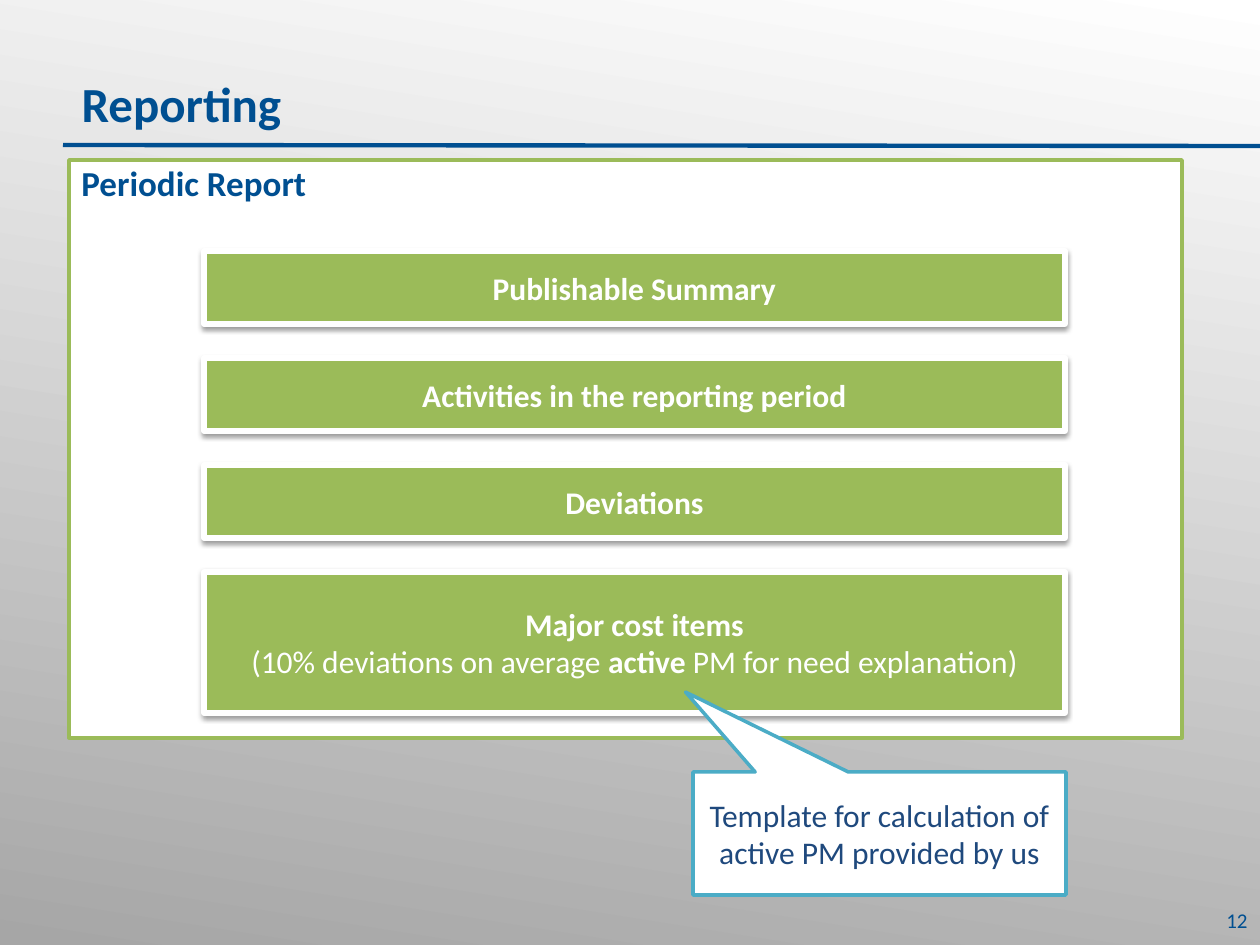
from lxml import etree
from pptx import Presentation
from pptx.dml.color import RGBColor
from pptx.enum.shapes import MSO_CONNECTOR, MSO_SHAPE
from pptx.enum.text import MSO_ANCHOR, MSO_AUTO_SIZE, PP_ALIGN
from pptx.oxml import parse_xml
from pptx.oxml.ns import nsdecls, qn
from pptx.util import Emu, Pt

RECT, CALL = MSO_SHAPE.RECTANGLE, MSO_SHAPE.RECTANGULAR_CALLOUT
LINE = MSO_CONNECTOR.STRAIGHT
TOP, MID = MSO_ANCHOR.TOP, MSO_ANCHOR.MIDDLE
LEFT, MIDST, RIGHT = PP_ALIGN.LEFT, PP_ALIGN.CENTER, PP_ALIGN.RIGHT
GROW = MSO_AUTO_SIZE.SHAPE_TO_FIT_TEXT

TITLE = "Reporting"
HEAD = "Periodic Report"
NOTE = "Template for calculation of active PM provided by us"
NUMBER = "12"
BARS = [
    (73, [[("Publishable Summary", True)]]),
    (73, [[("Activities in the reporting period", True)]]),
    (73, [[("Deviations", True)]]),
    (141, [
        [("Major cost items", True)],
        [("(10% deviations on average ", False), ("active", True),
         (" PM for need explanation)", False)],
    ]),
]
THEME = {
    "font": "Calibri",
    "blue": "004F91", "navy": "1F497D", "green": "9BBB59",
    "aqua": "4BACC6", "white": "FFFFFF", "grey": "A6A6A6",
    "title": 28, "head": 20, "body": 18, "small": 12,
}
WIDE, HIGH = 1260, 945
BAR_X, BAR_Y, BAR_W, GAP = 204, 251, 861, 34


def px(n):
    return Emu(round(n * 914400 / 126))


def tint(name):
    return RGBColor.from_string(THEME[name])


def place(item, box):
    item.left, item.top, item.width, item.height = map(px, box)


def write(item, lines, size, ink, align=LEFT, anchor=TOP):
    frame = item.text_frame
    frame.word_wrap = True
    frame.vertical_anchor = anchor
    para = frame.paragraphs[0]
    para.alignment = align
    for i, line in enumerate(lines):
        if i:
            para.add_line_break()
        for text, bold in line:
            run = para.add_run()
            run.text = text
            font = run.font
            font.name, font.size, font.bold = THEME["font"], Pt(THEME[size]), bold
            font.color.rgb = tint(ink)
    return para


def head(item, text, size):
    para = write(item, [[(text, True)]], size, "blue")
    para.line_spacing = 0.9
    para.space_before, para.space_after = Pt(0), Pt(12)
    item.text_frame.auto_size = GROW


def block(slide, kind, box, fill, edge, width):
    item = slide.shapes.add_shape(kind, *map(px, box))
    item.shadow.inherit = False
    item.fill.solid()
    item.fill.fore_color.rgb = tint(fill)
    item.line.color.rgb = tint(edge)
    item.line.width = Pt(width)
    return item


def shade(item):
    glow = item._element.spPr.find(qn("a:effectLst"))
    glow.append(parse_xml(
        f'<a:outerShdw {nsdecls("a")} blurRad="{Pt(3.1)}" dist="{Pt(1.6)}" '
        'dir="5400000" rotWithShape="0"><a:srgbClr val="000000">'
        '<a:alpha val="38000"/></a:srgbClr></a:outerShdw>'))


def backdrop(slide):
    item = slide.shapes.add_shape(RECT, 0, 0, px(WIDE), px(HIGH))
    item.shadow.inherit = False
    item.line.fill.background()
    item.fill.gradient()
    item.fill.gradient_angle = 261
    for stop, name in zip(item.fill.gradient_stops, ("white", "grey")):
        stop.color.rgb = tint(name)
    rule = slide.shapes.add_connector(LINE, px(63), px(145), px(WIDE), px(146))
    rule.line.color.rgb = tint("blue")
    rule.line.width = Pt(2.5)
    etree.SubElement(rule._element.spPr, qn("a:effectLst"))


def main():
    deck = Presentation()
    deck.slide_width, deck.slide_height = px(WIDE), px(HIGH)
    slide = deck.slides.add_slide(deck.slide_layouts[5])
    shapes = slide.shapes
    backdrop(slide)
    block(slide, RECT, (69, 160, 1113, 578), "white", "green", 2)

    title = shapes.title
    shapes._spTree.append(title._element)
    place(title, (69, 74, 1139, 67))
    head(title, TITLE, "title")
    label = shapes.add_textbox(*map(px, (69, 160, 1158, 50)))
    head(label, HEAD, "head")
    page = shapes.add_textbox(*map(px, (966, 895, 294, 50)))
    write(page, [[(NUMBER, False)]], "small", "blue", RIGHT, MID)

    y = BAR_Y
    for high, lines in BARS:
        bar = block(slide, RECT, (BAR_X, y, BAR_W, high), "green", "white", 3)
        shade(bar)
        write(bar, lines, "body", "white", MIDST, MID)
        y += high + GAP

    note = block(slide, CALL, (693, 772, 373, 123), "white", "aqua", 2)
    note.adjustments[0], note.adjustments[1] = -0.52, -1.15
    write(note, [[(NOTE, False)]], "body", "navy", MIDST, MID)
    deck.save("out.pptx")


if __name__ == "__main__":
    main()
